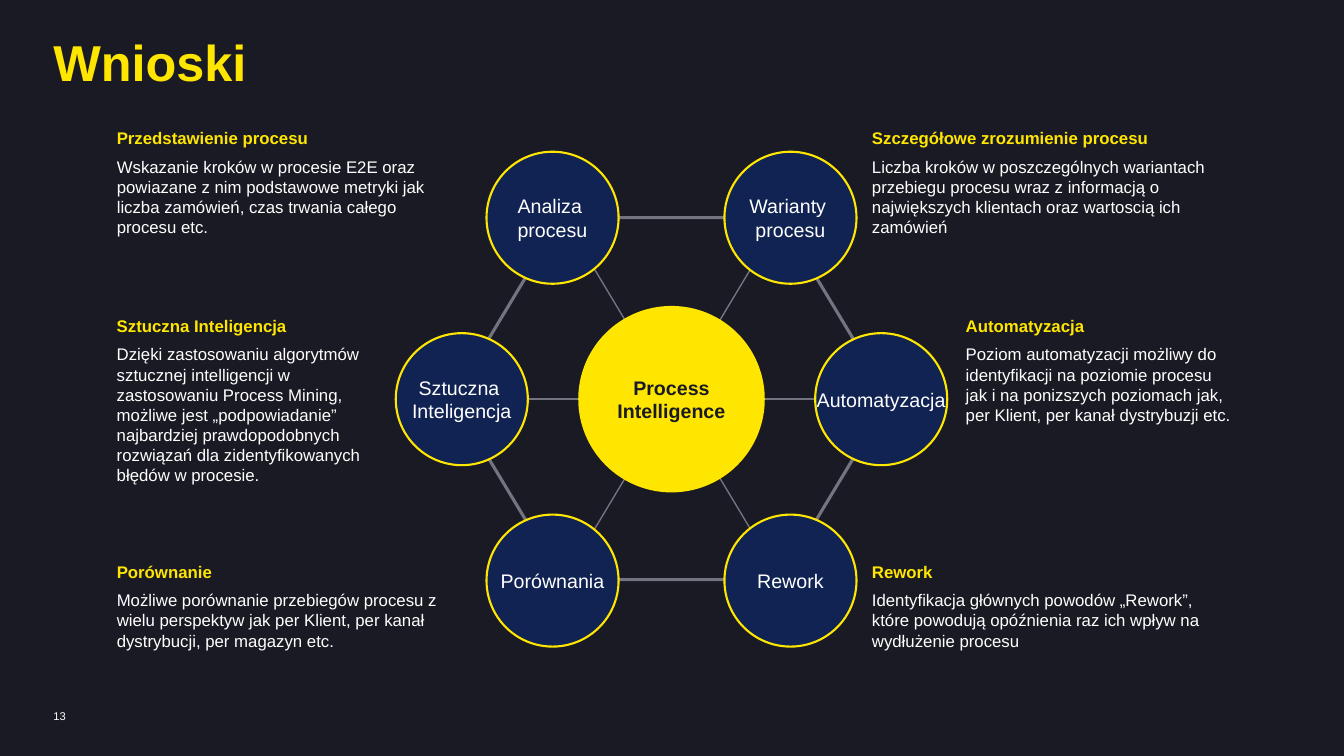
from lxml import etree
from pptx import Presentation
from pptx.dml.color import RGBColor
from pptx.enum.shapes import MSO_CONNECTOR, MSO_SHAPE
from pptx.enum.text import MSO_ANCHOR, MSO_AUTO_SIZE, PP_ALIGN
from pptx.oxml.ns import qn
from pptx.util import Inches, Pt

DARK = RGBColor(0x1A, 0x1A, 0x24)
YELLOW = RGBColor(0xFF, 0xE6, 0x00)
NAVY = RGBColor(0x10, 0x23, 0x52)
GREY = RGBColor(0x74, 0x74, 0x80)
WHITE = RGBColor(0xFF, 0xFF, 0xFF)


def write(tf, lines, size, color=WHITE, bold=False, align=PP_ALIGN.LEFT,
          anchor=MSO_ANCHOR.TOP, wrap=True, insets=(0, 0, 0, 0), after=0):
    """Fill a text frame; insets are left, top, right, bottom in inches."""
    tf.word_wrap = wrap
    tf.vertical_anchor = anchor
    tf.margin_left, tf.margin_top, tf.margin_right, tf.margin_bottom = map(Inches, insets)
    for i, line in enumerate(lines):
        p = tf.paragraphs[0] if i == 0 else tf.add_paragraph()
        p.alignment = align
        p.space_after = Pt(after)
        r = p.add_run()
        r.text = line
        r.font.name = "Arial"
        r.font.size = Pt(size)
        r.font.bold = bold
        r.font.color.rgb = color


def add_circle(cx, cy, diameter, fill):
    sp = s.shapes.add_shape(MSO_SHAPE.OVAL, Inches(cx - diameter / 2), Inches(cy - diameter / 2),
                            Inches(diameter), Inches(diameter))
    sp.shadow.inherit = False
    sp.fill.solid()
    sp.fill.fore_color.rgb = fill
    sp.line.color.rgb = YELLOW
    sp.line.width = Pt(1.5)
    return sp


prs = Presentation()
prs.slide_width, prs.slide_height = Inches(13.33), Inches(7.5)
s = prs.slides.add_slide(prs.slide_layouts[5])
s.background.fill.solid()
s.background.fill.fore_color.rgb = DARK

title = s.shapes.title
title.left, title.top, title.width, title.height = map(Inches, (0.53, 0.4, 12.28, 0.51))
write(title.text_frame, ["Wnioski"], 36, YELLOW, bold=True)
title.text_frame.auto_size = MSO_AUTO_SIZE.NONE
title.text_frame.paragraphs[0].line_spacing = 0.85

number = s.shapes.add_textbox(Inches(0.53), Inches(7.04), Inches(0.56), Inches(0.13))
write(number.text_frame, ["13"], 8)

# Hexagon ring and its diagonals
ring = s.shapes.add_shape(MSO_SHAPE.HEXAGON, Inches(4.49), Inches(2.16), Inches(4.33), Inches(3.59))
ring.adjustments[0], ring.adjustments[1] = 0.301, 1.155
ring.shadow.inherit = False
ring.fill.background()
ring.line.color.rgb = GREY
ring.line.width = Pt(2.25)

for x1, y1, x2, y2 in [(7.75, 2.16, 5.59, 5.76), (5.59, 2.16, 7.75, 5.76), (4.5, 3.96, 8.84, 3.96)]:
    spoke = s.shapes.add_connector(MSO_CONNECTOR.STRAIGHT, Inches(x1), Inches(y1), Inches(x2), Inches(y2))
    spoke.line.color.rgb = GREY
    spoke.line.width = Pt(1)
    etree.SubElement(spoke._element.spPr, qn("a:effectLst"))

# Circles sit on three rows, mirrored about the hub
HUB_X, HUB_Y, ROW_STEP = 6.66, 3.96, 1.8
NEAR, FAR = 1.18, 2.08
topics = [
    (-NEAR, -1, ["Analiza ", "procesu"]),
    (NEAR, -1, ["Warianty ", "procesu"]),
    (-NEAR, 1, ["Porównania"]),
    (NEAR, 1, ["Rework"]),
    (FAR, 0, ["Automatyzacja"]),
    (-FAR, 0, ["Sztuczna ", "Inteligencja"]),
]
for dx, row, label in topics:
    sp = add_circle(HUB_X + dx, HUB_Y + row * ROW_STEP, 1.31, NAVY)
    write(sp.text_frame, label, 14, align=PP_ALIGN.CENTER, anchor=MSO_ANCHOR.MIDDLE,
          wrap=False, insets=(0.04, 0.04, 0.04, 0.04))

hub = add_circle(HUB_X, HUB_Y, 1.85, YELLOW)
hub.line.fill.background()
write(hub.text_frame, ["Process Intelligence"], 14, DARK, bold=True,
      align=PP_ALIGN.CENTER, anchor=MSO_ANCHOR.MIDDLE)

LEFT_X, RIGHT_X = 1.06, 8.55
TOP_Y, MIDDLE_Y, BOTTOM_Y = 1.27, 3.13, 5.57
notes = [
    (LEFT_X, TOP_Y, 3.61, 1.14, "Przedstawienie procesu",
     "Wskazanie kroków w procesie E2E oraz powiazane z nim podstawowe metryki jak "
     "liczba zamówień, czas trwania całego procesu etc."),
    (LEFT_X, MIDDLE_Y, 2.86, 1.75, "Sztuczna Inteligencja",
     "Dzięki zastosowaniu algorytmów sztucznej intelligencji w zastosowaniu Process Mining, "
     "możliwe jest „podpowiadanie” najbardziej prawdopodobnych rozwiązań dla "
     "zidentyfikowanych błędów w procesie."),
    (LEFT_X, BOTTOM_Y, 3.65, 0.94, "Porównanie",
     "Możliwe porównanie przebiegów procesu z wielu perspektyw jak per Klient, "
     "per kanał dystrybucji, per magazyn etc."),
    (RIGHT_X, TOP_Y, 3.71, 1.14, "Szczegółowe zrozumienie procesu",
     "Liczba kroków w poszczególnych wariantach przebiegu procesu wraz z informacją o "
     "największych klientach oraz wartoscią ich zamówień"),
    (9.48, MIDDLE_Y, 2.86, 1.35, "Automatyzacja",
     "Poziom automatyzacji możliwy do identyfikacji na poziomie procesu jak i na "
     "ponizszych poziomach jak, per Klient, per kanał dystrybuzji etc."),
    (RIGHT_X, BOTTOM_Y, 3.66, 0.94, "Rework",
     "Identyfikacja głównych powodów „Rework”, które powodują opóźnienia raz ich wpływ "
     "na wydłużenie procesu"),
]
for x, y, w, h, heading, body in notes:
    tb = s.shapes.add_textbox(Inches(x), Inches(y), Inches(w), Inches(h))
    write(tb.text_frame, [heading, body], 12, insets=(0.1, 0, 0.1, 0.05), after=6)
    heading_font = tb.text_frame.paragraphs[0].runs[0].font
    heading_font.bold = True
    heading_font.color.rgb = YELLOW

prs.save("out.pptx")
